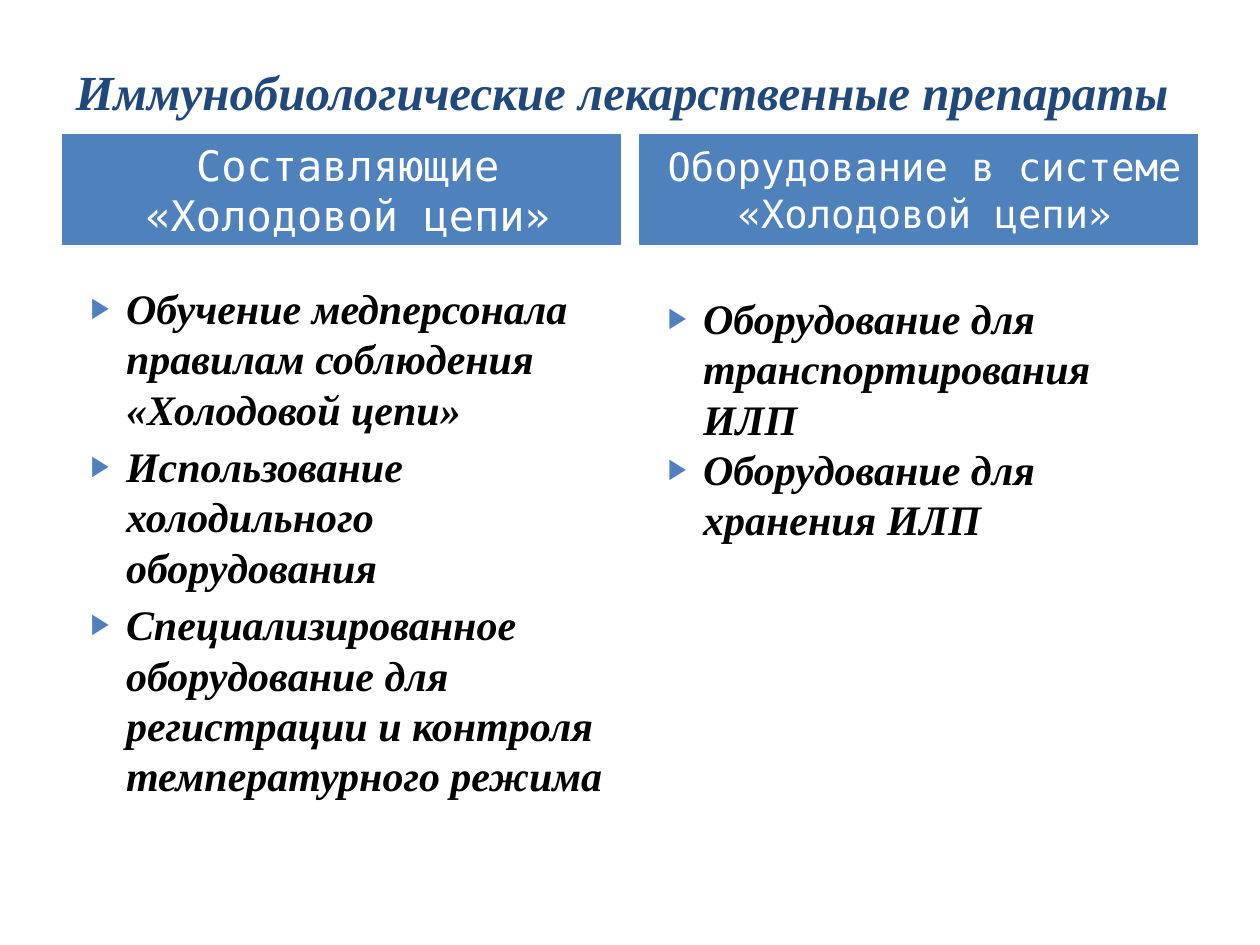
import pptx
import pptx.dml.color
import pptx.enum.text
import pptx.oxml
import pptx.oxml.ns
import pptx.util
from pptx.util import Inches

NAVY = pptx.dml.color.RGBColor(0x1F, 0x49, 0x7D)
BLUE = pptx.dml.color.RGBColor(0x4F, 0x81, 0xBD)
WHITE = pptx.dml.color.RGBColor(0xFF, 0xFF, 0xFF)
BLACK = pptx.dml.color.RGBColor(0, 0, 0)
SERIF = "Times New Roman"
MONO = "DejaVu Sans Mono"

MARGIN = 0.5
COLUMN_WIDTH = 4.42
COLUMN_STEP = 4.58
HEADER_TOP = 1.07
HEADER_HEIGHT = 0.87
LIST_BOTTOM = 6.7

COLUMNS = [
    {
        "header": "Составляющие «Холодовой цепи»",
        "header_size": 24,
        "list_top": 2.19,
        "gap": 4,
        "items": [
            "Обучение медперсонала правилам соблюдения «Холодовой цепи»",
            "Использование холодильного оборудования",
            "Специализированное оборудование для регистрации и контроля "
            "температурного режима",
        ],
    },
    {
        "header": "Оборудование в системе «Холодовой цепи»",
        "header_size": 22.2,
        "list_top": 2.27,
        "gap": 0,
        "items": [
            "Оборудование для транспортирования ИЛП",
            "Оборудование для хранения ИЛП",
        ],
    },
]


def place(box, left, top, width, height):
    box.left, box.top = Inches(left), Inches(top)
    box.width, box.height = Inches(width), Inches(height)
    box.text_frame.word_wrap = True
    box.text_frame.auto_size = pptx.enum.text.MSO_AUTO_SIZE.NONE


def format_runs(para, name, size, color, emphasis):
    for span in para.runs:
        span.font.name = name
        span.font.size = pptx.util.Pt(size)
        span.font.color.rgb = color
        span.font.bold = emphasis
        span.font.italic = emphasis


def add_bullet(para):
    properties = para._p.get_or_add_pPr()
    properties.set("marL", str(Inches(0.4)))
    properties.set("indent", str(Inches(-0.28)))
    namespace = pptx.oxml.ns.nsdecls("a")
    for markup in (
        f'<a:buClr {namespace}><a:srgbClr val="{BLUE}"/></a:buClr>',
        f'<a:buSzPct {namespace} val="68000"/>',
        f'<a:buChar {namespace} char="▶"/>',
    ):
        properties.append(pptx.oxml.parse_xml(markup))


def fill_title(box, left, top, width, height):
    place(box, left, top, width, height)
    frame = box.text_frame
    frame.text = "Иммунобиологические лекарственные препараты"
    frame.vertical_anchor = pptx.enum.text.MSO_ANCHOR.MIDDLE
    para = frame.paragraphs[0]
    para.alignment = pptx.enum.text.PP_ALIGN.LEFT
    format_runs(para, SERIF, 28, NAVY, True)


def fill_header(box, text, size, left, top, width, height):
    place(box, left, top, width, height)
    box.fill.solid()
    box.fill.fore_color.rgb = BLUE
    box.line.color.rgb = BLUE
    box.line.width = pptx.util.Pt(0.75)
    frame = box.text_frame
    frame.margin_left = Inches(0.2)
    frame.vertical_anchor = pptx.enum.text.MSO_ANCHOR.MIDDLE
    frame.text = text
    para = frame.paragraphs[0]
    para.alignment = pptx.enum.text.PP_ALIGN.CENTER
    para.space_before = pptx.util.Pt(0)
    format_runs(para, MONO, size, WHITE, False)


def fill_list(box, items, gap, left, top, width, height):
    place(box, left, top, width, height)
    frame = box.text_frame
    for index, item in enumerate(items):
        para = frame.add_paragraph() if index else frame.paragraphs[0]
        para.text = item
        para.space_before = pptx.util.Pt(gap if index else 0)
        add_bullet(para)
        format_runs(para, SERIF, 24, BLACK, True)


def fill_column(header, body, column, left):
    fill_header(header, column["header"], column["header_size"],
                left, HEADER_TOP, COLUMN_WIDTH, HEADER_HEIGHT)
    top = column["list_top"]
    fill_list(body, column["items"], column["gap"],
              left, top, COLUMN_WIDTH, LIST_BOTTOM - top)


def main():
    deck = pptx.Presentation()
    deck.slide_width, deck.slide_height = Inches(10), Inches(7.5)
    page = deck.slides.add_slide(deck.slide_layouts.get_by_name("Comparison"))
    boxes = {box.placeholder_format.idx: box for box in page.placeholders}
    fill_title(boxes[0], MARGIN, 0.3, 9, 0.85)
    for index, column in enumerate(COLUMNS):
        fill_column(boxes[2 * index + 1], boxes[2 * index + 2], column,
                    MARGIN + index * COLUMN_STEP)
    for index in (10, 11, 12):
        if index in boxes:
            boxes[index].element.getparent().remove(boxes[index].element)
    deck.save("out.pptx")


if __name__ == "__main__":
    main()
